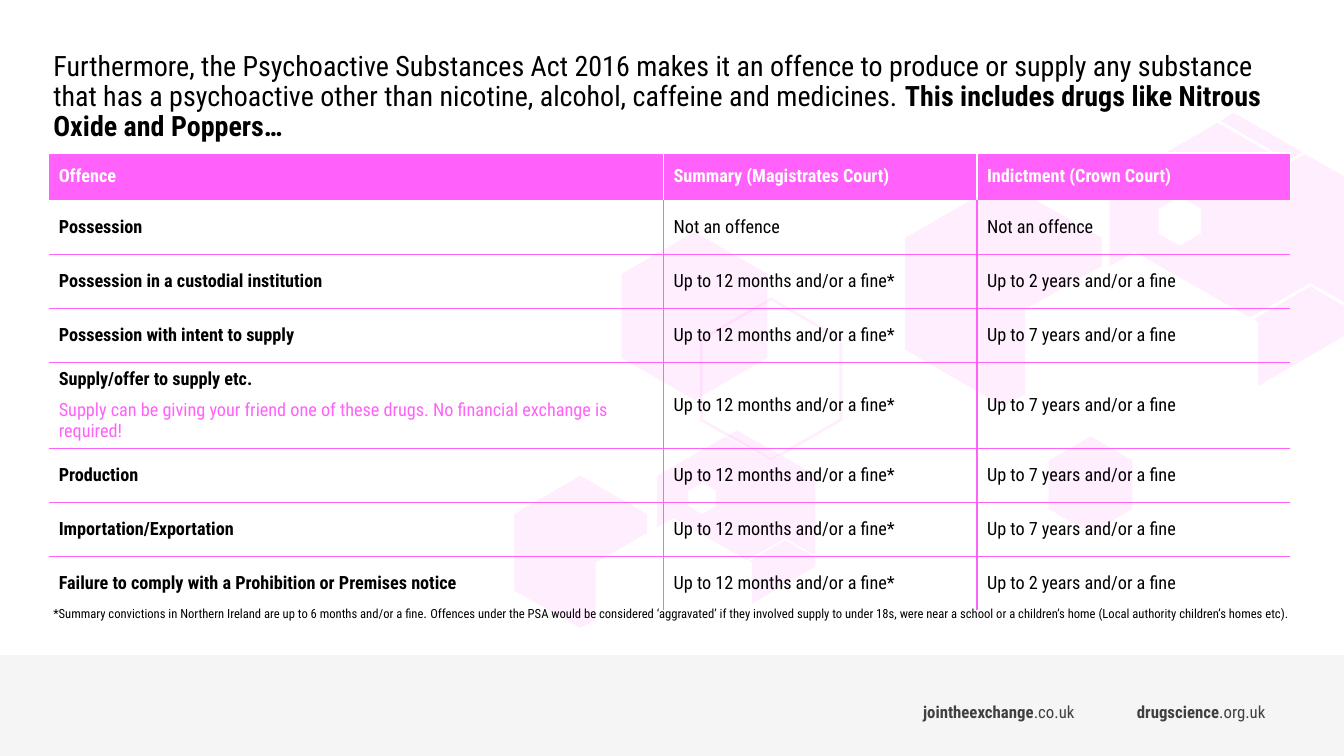
import math
from dataclasses import dataclass

from lxml import etree
from pptx import Presentation
from pptx.dml.color import RGBColor
from pptx.enum import shapes, text
from pptx.oxml import ns
from pptx.util import Pt


@dataclass(frozen=True)
class Theme:
    font: str = "Roboto Condensed"
    pink: str = "FF61FA"
    white: str = "FFFFFF"
    black: str = "000000"
    grey: str = "404040"
    footer: str = "F2F2F2"
    title: int = 20
    table: int = 13
    link: int = 12
    note: int = 9
    note_stop: int = 10


T = Theme()
YEAR = "Up to 12 months and/or a fine*"
HEADINGS = ("Offence", "Summary (Magistrates Court)", "Indictment (Crown Court)")
OFFENCES = (
    ("Possession", "Not an offence", "Not an offence"),
    ("Possession in a custodial institution", YEAR, "Up to 2 years and/or a fine"),
    ("Possession with intent to supply", YEAR, "Up to 7 years and/or a fine"),
    ("Supply/offer to supply etc.", YEAR, "Up to 7 years and/or a fine"),
    ("Production", YEAR, "Up to 7 years and/or a fine"),
    ("Importation/Exportation", YEAR, "Up to 7 years and/or a fine"),
    ("Failure to comply with a Prohibition or Premises notice", YEAR,
     "Up to 2 years and/or a fine"),
)
SUPPLY_ROW = 4
SUPPLY_NOTE = ("Supply can be giving your friend one of these drugs. "
               "No financial exchange is required!")


def hexagon(cx, cy, radius, turn=1):
    """Points of an upright hexagon; turn -1 reverses the direction, for holes."""
    angles = [math.radians(turn * 60 * i - 90) for i in range(6)]
    return [(cx + radius * math.cos(a), cy + radius * math.sin(a)) for a in angles]


# Each hexagon figure is a list of outlines.
HEXAGONS = (
    [hexagon(550.8, 271.1, 58.7), hexagon(550.8, 271.1, 56.4, -1)],
    [[(367.2, 367.2), (367.2, 421.9), (414.7, 448.6), (425.5, 442.8),
      (425.5, 401.8), (462.2, 380.9), (462.2, 367.2), (414.7, 339.8)]],
    [[(526.3, 307.4), (557.3, 324.7), (550.8, 328.3), (519.8, 311)],
     [(518.4, 311.8), (550.8, 329.8), (558.7, 325.4), (582.5, 339.8), (582.5, 396.7),
      (560.9, 384.5), (533.5, 400.3), (481, 370.1), (469.4, 376.6), (469.4, 339.8)],
     hexagon(501.5, 356, 11.2, -1),
     [(560.9, 385.9), (582.5, 398.2), (582.5, 404.6), (537.1, 431.3),
      (537.1, 401.8), (535, 401)]],
    [hexagon(496.1, 225.7, 60.1)],
    [[(895.7, 228.2), (898.6, 230.4), (898.6, 275.8), (970.6, 234),
      (970.6, 224.6), (936, 204.5)],
     hexagon(842.8, 158, 17.6),
     [(792.7, 131.8), (792.7, 190.1), (810.7, 180), (892.8, 226.8), (936, 202.3),
      (970.6, 221.8), (970.6, 131.8), (932.4, 110.2), (920.2, 116.6), (869.8, 87.8)],
     [(881.3, 80.6), (871.9, 86.4), (920.2, 114.5), (930.2, 108.7)]],
    [hexagon(779, 346.3, 34.6)],
    [[(716.4, 129.6), (787, 169.9), (787, 190.1), (732.2, 221),
      (732.2, 281.5), (716.4, 290.2), (646.6, 249.8), (646.6, 169.9)]],
)


def paint(sp, color, opacity):
    sp.shadow.inherit = False
    sp.line.fill.background()
    sp.fill.solid()
    sp.fill.fore_color.rgb = RGBColor.from_string(color)
    clr = sp.fill._xPr.find(ns.qn("a:solidFill"))[0]
    etree.SubElement(clr, ns.qn("a:alpha"), val=str(opacity * 1000))


def add_run(p, words, size, color, bold=False):
    r = p.add_run()
    r.text = words
    r.font.name = T.font
    r.font.size = Pt(size)
    r.font.bold = bold
    r.font.color.rgb = RGBColor.from_string(color)


def add_text(slide, box, runs, inset_y=7.2):
    """Add a one-paragraph text box; runs are (words, size, color, bold)."""
    tf = slide.shapes.add_textbox(*map(Pt, box)).text_frame
    tf.word_wrap = True
    tf.margin_left = tf.margin_right = Pt(7.2)
    tf.margin_top = tf.margin_bottom = Pt(inset_y)
    p = tf.paragraphs[0]
    for run in runs:
        add_run(p, *run)
    return p


def add_hexagons(slide, box):
    x, y = box[:2]
    for outlines in HEXAGONS:
        builder = None
        for outline in outlines:
            pts = [(Pt(x + px), Pt(y + py)) for px, py in outline]
            if builder is None:
                builder = slide.shapes.build_freeform(*pts[0])
            else:
                builder.move_to(*pts[0])
            builder.add_line_segments(pts[1:], close=True)
        paint(builder.convert_to_shape(), T.pink, 10)


def add_footer(slide, box):
    x, y, w, h = box
    band = slide.shapes.add_shape(shapes.MSO_SHAPE.RECTANGLE, *map(Pt, box))
    paint(band, T.footer, 75)
    for left, name, ending in ((652.3, "jointheexchange", ".co.uk"),
                               (805, "drugscience", ".org.uk")):
        add_text(slide, (x + left, y + 26, 251.3, 28.8),
                 [(name, T.link, T.grey, True), (ending, T.link, T.grey)])


def add_title(slide, box):
    p = add_text(slide, box, [
        ("Furthermore, the Psychoactive Substances Act 2016 makes it an offence to "
         "produce or supply any substance that has a psychoactive other than nicotine, "
         "alcohol, caffeine and medicines. ", T.title, T.black),
        ("This includes drugs like Nitrous Oxide and Poppers…", T.title, T.black, True),
    ], inset_y=3.6)
    p.line_spacing = 0.9


def set_borders(cell, **colors):
    """Draw the sides given as L, R, T, B; a side without a colour stays empty."""
    tcPr = cell._tc.get_or_add_tcPr()
    for side in "LRTB":
        ln = etree.SubElement(tcPr, ns.qn("a:ln" + side), w=str(Pt(1)))
        if colors.get(side):
            fill = etree.SubElement(ln, ns.qn("a:solidFill"))
            etree.SubElement(fill, ns.qn("a:srgbClr"), val=colors[side])
        else:
            etree.SubElement(ln, ns.qn("a:noFill"))


def add_offence_table(slide, box):
    grid = (HEADINGS,) + OFFENCES
    last_row, last_col = len(grid) - 1, len(HEADINGS) - 1
    table = slide.shapes.add_table(len(grid), len(HEADINGS), *map(Pt, box)).table
    table.first_row = table.horz_banding = False
    for column, width in zip(table.columns, (439.2, 223.9, 223.9)):
        column.width = Pt(width)
    for i, row in enumerate(grid):
        table.rows[i].height = Pt({0: 33.8, SUPPLY_ROW: 60}.get(i, 38.65))
        for j, words in enumerate(row):
            cell = table.cell(i, j)
            cell.vertical_anchor = text.MSO_ANCHOR.MIDDLE
            if i == 0:
                set_borders(cell, L=T.white, R=T.white, T=T.white)
                cell.fill.solid()
                cell.fill.fore_color.rgb = RGBColor.from_string(T.pink)
            else:
                set_borders(cell, L=j > 0 and T.pink, R=j < last_col and T.pink,
                            T=i > 1 and T.pink, B=i < last_row and T.pink)
                cell.fill.background()
            add_run(cell.text_frame.paragraphs[0], words, T.table,
                    T.white if i == 0 else T.black, i == 0 or j == 0)
    p = table.cell(SUPPLY_ROW, 0).text_frame.add_paragraph()
    p.space_before = Pt(7)
    add_run(p, SUPPLY_NOTE, T.table, T.pink)


def add_footnote(slide, box):
    add_text(slide, box, [
        ("*Summary convictions in Northern Ireland are up to 6 months and/or a fine",
         T.note, T.black),
        (". ", T.note_stop, T.black),
        ("Offences under the PSA would be considered ‘aggravated’ if they involved "
         "supply to under 18s, were near a school or a children’s home "
         "(Local authority children’s homes etc).", T.note, T.black),
    ])


def main():
    prs = Presentation()
    prs.slide_width, prs.slide_height = Pt(960), Pt(540)
    slide = prs.slides.add_slide(prs.slide_layouts[6])
    add_hexagons(slide, (0, 0, 960, 540))
    add_footer(slide, (0, 468, 960, 72))
    add_offence_table(slide, (34.8, 109.3, 887, 325.7))
    add_title(slide, (31, 33.8, 887, 62.6))
    add_footnote(slide, (31, 425.5, 938.9, 26.6))
    prs.save("out.pptx")


if __name__ == "__main__":
    main()
